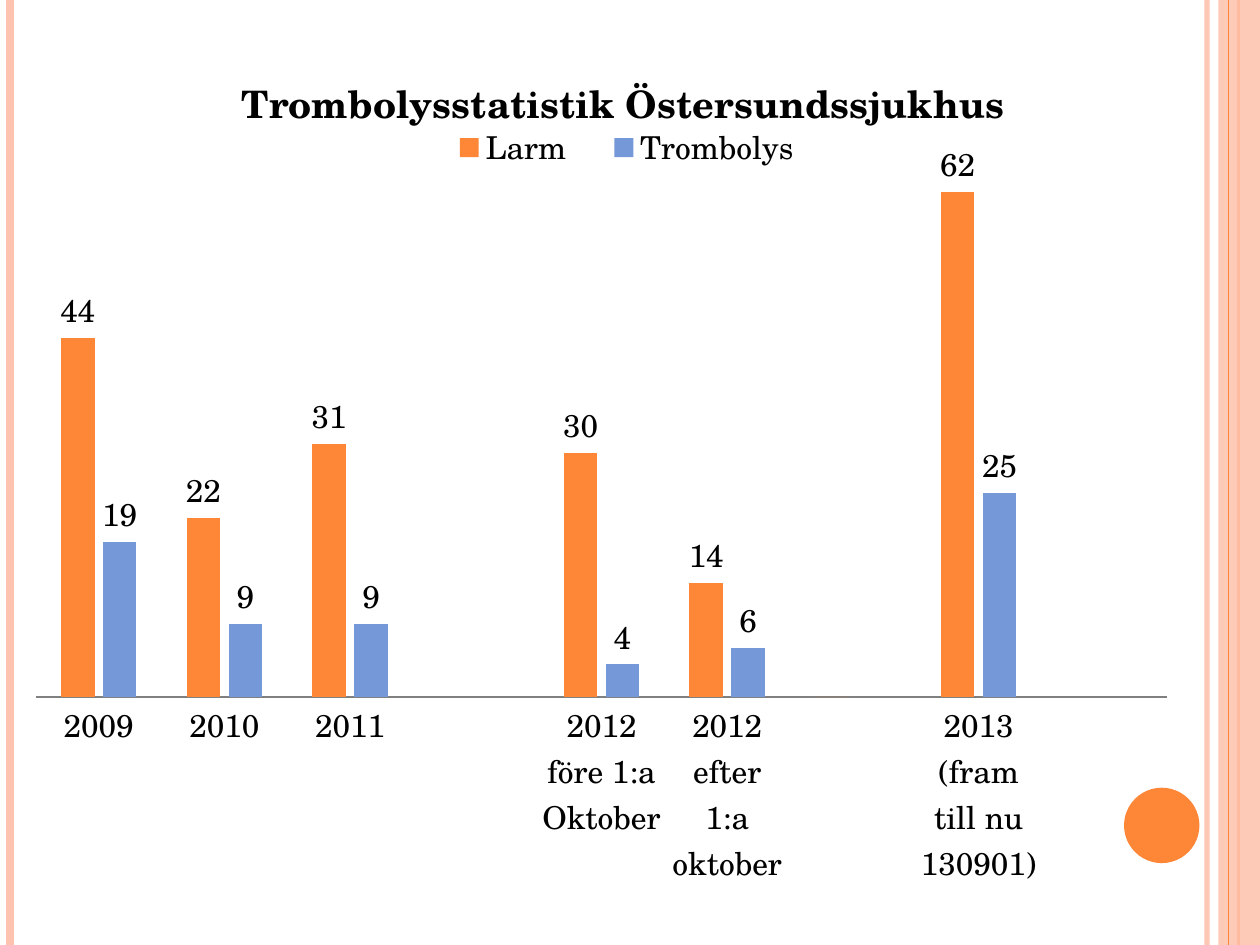
from lxml import etree
from pptx import Presentation
from pptx.chart.data import CategoryChartData
from pptx.dml.color import RGBColor
from pptx.enum import chart as ch, shapes as sh
from pptx.oxml import parse_xml
from pptx.oxml.ns import nsdecls, qn
from pptx.util import Cm, Pt

# Content
TITLE = "Trombolysstatistik Östersundssjukhus"
PERIODS = ["2009", "2010", "2011", "", "2012 före 1:a Oktober",
           "2012 efter 1:a oktober", "", "2013 (fram till nu 130901)", ""]
SERIES = [
    ("Larm", [44, 22, 31, None, 30, 14, 0, 62, None], "FE8637"),
    ("Trombolys", [19, 9, 9, None, 4, 6, None, 25, None], "7598D9"),
]
FONT = "TeX Gyre Schola"
ORANGE, PEACH, BLACK = "FE8637", "FEC3AE", "000000"
WIDTH, HEIGHT = 25.4, 19.05
# Stripes: x in cm, colour, width in points, opacity in percent
STRIPES_BELOW = [(24.33, PEACH, 3, 93), (0.2, PEACH, 4.5, 100), (24.97, ORANGE, 1.5, 100)]
STRIPES_ABOVE = [(24.77, ORANGE, 0.75, 100)]


def paint(target, color, opacity=100):
    """Give a fill a solid colour, optionally see-through."""
    target.solid()
    target.fore_color.rgb = RGBColor.from_string(color)
    if opacity < 100:
        for clr in target._xPr.iter(qn("a:srgbClr")):
            etree.SubElement(clr, qn("a:alpha")).set("val", str(opacity * 1000))


def style_font(font, size, bold=False):
    font.name, font.size, font.bold = FONT, Pt(size), bold
    paint(font.fill, BLACK)


def add_stripes(stripes):
    for x, color, weight, opacity in stripes:
        stripe = slide.shapes.add_connector(
            sh.MSO_CONNECTOR.STRAIGHT, Cm(x), 0, Cm(x), Cm(HEIGHT))
        stripe.line.width = Pt(weight)
        paint(stripe.line.fill, color, opacity)
        etree.SubElement(stripe._element.spPr, qn("a:effectLst"))


def add_block(kind, box, color, opacity=100):
    block = slide.shapes.add_shape(kind, *map(Cm, box))
    block.shadow.inherit = False
    block.line.fill.background()
    paint(block.fill, color, opacity)


def place(parent, successors, inner=False, **fractions):
    """Fix a chart part at fractions of the chart area."""
    for old in parent.findall(qn("c:layout")):
        parent.remove(old)
    settings = {"layoutTarget": "inner"} if inner else {}
    settings.update(xMode="edge", yMode="edge", **fractions)
    items = "".join(f'<c:{key} val="{value}"/>' for key, value in settings.items())
    layout = parse_xml(f'<c:layout {nsdecls("c")}><c:manualLayout>{items}'
                       '</c:manualLayout></c:layout>')
    parent.insert_element_before(layout, *successors)


prs = Presentation()
prs.slide_width, prs.slide_height = Cm(WIDTH), Cm(HEIGHT)
slide = prs.slides.add_slide(prs.slide_layouts[6])

# Side decoration
add_stripes(STRIPES_BELOW)
add_block(sh.MSO_SHAPE.RECTANGLE, (24.56, 0, 0.84, HEIGHT), PEACH, 87)
add_stripes(STRIPES_ABOVE)
add_block(sh.MSO_SHAPE.OVAL, (22.66, 15.88, 1.52, 1.52), ORANGE)

# Chart
data = CategoryChartData()
data.categories = PERIODS
for name, values, _ in SERIES:
    data.add_series(name, values)
chart = slide.shapes.add_chart(
    ch.XL_CHART_TYPE.COLUMN_CLUSTERED,
    Cm(0.71), Cm(0.53), Cm(23.6), Cm(18.01), data).chart
style_font(chart.font, 18)

# Title and legend
heading = chart.chart_title.text_frame
heading.text = TITLE
style_font(heading.paragraphs[0].font, 21.6, bold=True)
chart.chart_title.include_in_layout = False
place(chart.chart_title._element, ["c:overlay"], x=0.17, y=0.04)
chart.has_legend = True
chart.legend.position = ch.XL_LEGEND_POSITION.TOP
chart.legend.include_in_layout = False
place(chart.legend._element, ["c:overlay", "c:spPr", "c:txPr"],
      x=0.33, y=0.11, w=0.35, h=0.05)

# Axes
periods, counts = chart.category_axis, chart.value_axis
periods.major_tick_mark = ch.XL_TICK_MARK.NONE
paint(periods.format.line.fill, "808080")
counts.minimum_scale, counts.maximum_scale = 0, 70
counts.has_major_gridlines = False
counts.visible = False

# Columns; the number format leaves a zero unlabelled
plot = chart.plots[0]
plot.gap_width, plot.overlap, plot.vary_by_categories = 150, -25, False
for series, (_, _, color) in zip(plot.series, SERIES):
    paint(series.format.fill, color)
    labels = series.data_labels
    labels.show_value = True
    labels.position = ch.XL_LABEL_POSITION.OUTSIDE_END
    labels.number_format, labels.number_format_is_linked = "#", False
    style_font(labels.font, 18)
place(chart._chartSpace.chart.plotArea, ["c:barChart"], inner=True,
      x=0, y=0.112, w=0.967, h=0.639)

prs.save("out.pptx")
